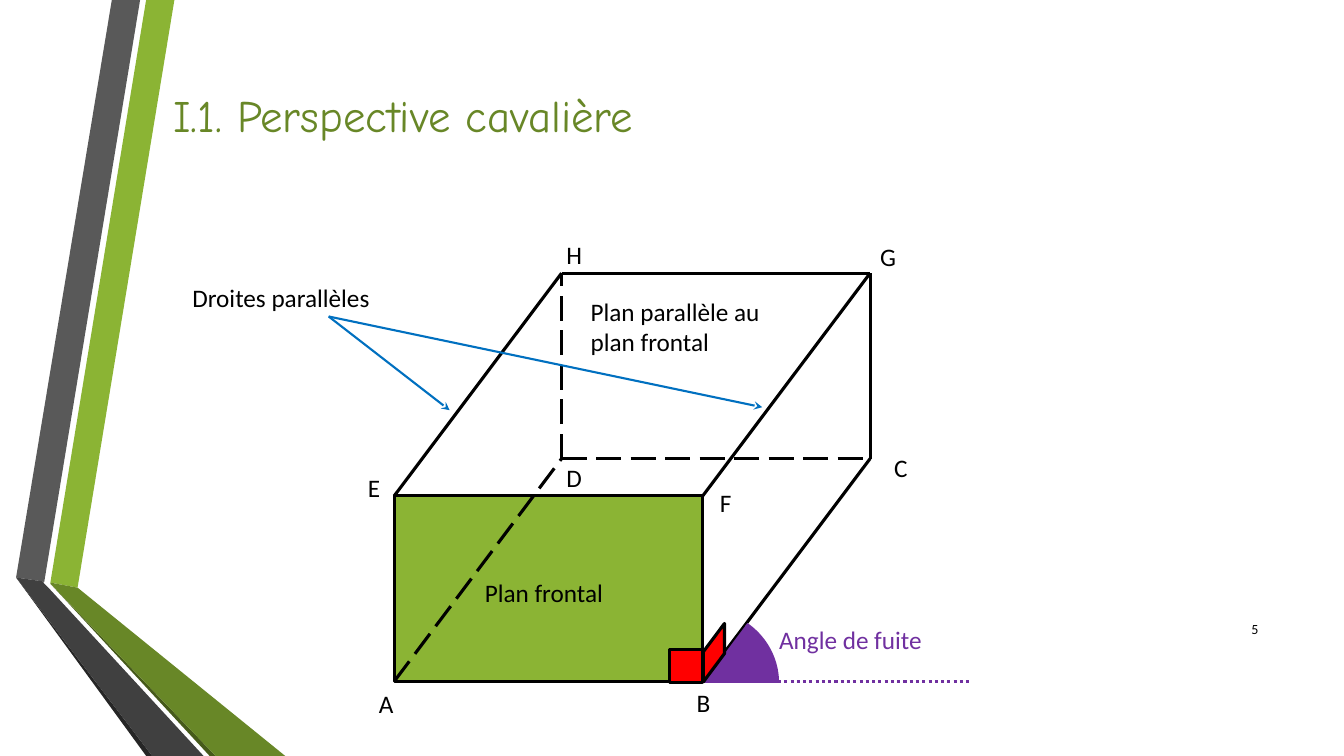
from lxml.etree import SubElement
from pptx import Presentation
from pptx.dml.color import RGBColor
from pptx.enum.dml import MSO_LINE
from pptx.enum.shapes import MSO_CONNECTOR, MSO_SHAPE
from pptx.enum.text import MSO_ANCHOR, PP_ALIGN
from pptx.oxml.ns import qn
from pptx.util import Pt

PX = 9144  # EMU per px, 100 px to the inch
BLACK, GREEN, DARK_GREEN = "000000", "8BB434", "688727"
RED, BLUE, PURPLE = "FF0000", "0070C0", "7030A0"

# Ribbon bands along the left edge
RIBBONS = [
    (GREEN, [(50, 578), (77, 583), (173, 0), (145, 0)]),
    ("595959", [(139, 0), (111, 0), (16, 573), (44, 577)]),
    ("262626", [(16, 573), (145, 750), (151, 750)]),
    ("465A1A", [(50, 579), (208, 750), (214, 750)]),
    (DARK_GREEN, [(50, 579), (214, 750), (283, 750), (77, 583), (50, 578)]),
    ("404040", [(202, 750), (48, 583), (43, 578), (44, 577), (16, 573), (151, 750)]),
]

# Box in cavalier perspective: front face ABFE, moved back by the depth
LEFT, BOTTOM, WIDTH, HEIGHT = 391, 676, 306, 184
DEPTH_X, DEPTH_Y = 166, -221
FRONT = {
    "A": (LEFT, BOTTOM),
    "B": (LEFT + WIDTH, BOTTOM),
    "F": (LEFT + WIDTH, BOTTOM - HEIGHT),
    "E": (LEFT, BOTTOM - HEIGHT),
}
BACK = {
    name: (FRONT[front][0] + DEPTH_X, FRONT[front][1] + DEPTH_Y)
    for name, front in zip("DCGH", "ABFE")
}
VERTICES = FRONT | BACK
VISIBLE_EDGES = ["BC", "FG", "EH", "CG", "HG"]
HIDDEN_EDGES = ["AD", "DH", "DC"]
LETTER_PLACES = {
    "A": (366, 678), "B": (681, 677), "C": (877, 444), "D": (552, 454),
    "E": (355, 464), "F": (704, 479), "G": (863, 234), "H": (552, 233),
}


def color(hex_string):
    return RGBColor.from_string(hex_string)


def style_line(line, hex_string, points, dash=None):
    line.color.rgb = color(hex_string)
    line.width = Pt(points)
    if dash:
        line.dash_style = dash


def add_band(page, fill, points):
    builder = page.shapes.build_freeform(*points[0], scale=PX)
    builder.add_line_segments(points[1:], close=True)
    band = builder.convert_to_shape()
    band.shadow.inherit = False
    band.fill.solid()
    band.fill.fore_color.rgb = color(fill)
    band.line.fill.background()


def add_preset(page, kind, place, fill, line=BLACK, points=2.25, adjustments=()):
    shape = page.shapes.add_shape(kind, *(PX * length for length in place))
    shape.shadow.inherit = False
    shape.fill.solid()
    shape.fill.fore_color.rgb = color(fill)
    style_line(shape.line, line, points)
    for index, value in enumerate(adjustments):
        shape.adjustments[index] = value
    return shape


def add_line(page, start, end, hex_string=BLACK, points=2.25, dash=None, arrow=False):
    ends = (PX * length for length in (*start, *end))
    connector = page.shapes.add_connector(MSO_CONNECTOR.STRAIGHT, *ends)
    style_line(connector.line, hex_string, points, dash)
    properties = connector._element.spPr
    if arrow:
        SubElement(properties.find(qn("a:ln")), qn("a:tailEnd"), type="stealth")
    SubElement(properties, qn("a:effectLst"))


def add_text(page, text, place, size=18, hex_string=BLACK, font="Calibri",
             align=PP_ALIGN.LEFT, anchor=MSO_ANCHOR.TOP):
    box = page.shapes.add_textbox(*(PX * length for length in place))
    frame = box.text_frame
    frame.word_wrap = True
    frame.vertical_anchor = anchor
    para = frame.paragraphs[0]
    para.alignment = align
    span = para.add_run()
    span.text = text
    span.font.size = Pt(size)
    span.font.name = font
    span.font.color.rgb = color(hex_string)


def add_solid(page):
    add_preset(page, MSO_SHAPE.RECTANGLE, (*VERTICES["E"], WIDTH, HEIGHT), GREEN)
    for edges, dash in ((VISIBLE_EDGES, None), (HIDDEN_EDGES, MSO_LINE.LONG_DASH)):
        for start, end in edges:
            add_line(page, VERTICES[start], VERTICES[end], dash=dash)
    for letter, corner in LETTER_PLACES.items():
        add_text(page, letter, (*corner, 32, 40))
    add_text(page, "Plan frontal", (471, 568, 181, 40))
    add_text(page, "Plan parallèle au plan frontal", (576, 289, 224, 71))


def add_parallel_note(page):
    for target in ((756, 404), (446, 407)):
        add_line(page, (326, 314), target, BLUE, 1.5, arrow=True)
    add_text(page, "Droites parallèles", (181, 275, 307, 40))


def add_angles(page):
    # Receding angle, measured from the dotted horizontal
    add_line(page, VERTICES["B"], (964, 676), PURPLE, dash=MSO_LINE.ROUND_DOT)
    add_preset(page, MSO_SHAPE.ARC, (623, 606, 148, 143), PURPLE, PURPLE, 2.5,
               (184.05, 0))
    add_text(page, "Angle de fuite", (763, 614, 186, 40), hex_string=PURPLE)
    # Right angles at B, on the front and on the side face
    add_preset(page, MSO_SHAPE.RECTANGLE, (664, 644, 33, 33), RED)
    side_mark = add_preset(page, MSO_SHAPE.PARALLELOGRAM, (679, 637, 58, 21), RED,
                           adjustments=(1.34,))
    side_mark.rotation = 270
    side_mark._element.spPr.find(qn("a:xfrm")).set("flipH", "1")


def main():
    deck = Presentation()
    deck.slide_width, deck.slide_height = 1333 * PX, 750 * PX
    page = deck.slides.add_slide(deck.slide_layouts[6])
    for fill, points in RIBBONS:
        add_band(page, fill, points)
    add_text(page, "5", (1198, 604, 60, 40), 10, align=PP_ALIGN.RIGHT,
             anchor=MSO_ANCHOR.MIDDLE)
    add_text(page, "I.1. Perspective cavalière", (162, 82, 1096, 64), 32,
             DARK_GREEN, "Comic Neue")
    add_solid(page)
    add_parallel_note(page)
    add_angles(page)
    deck.save("out.pptx")


if __name__ == "__main__":
    main()
